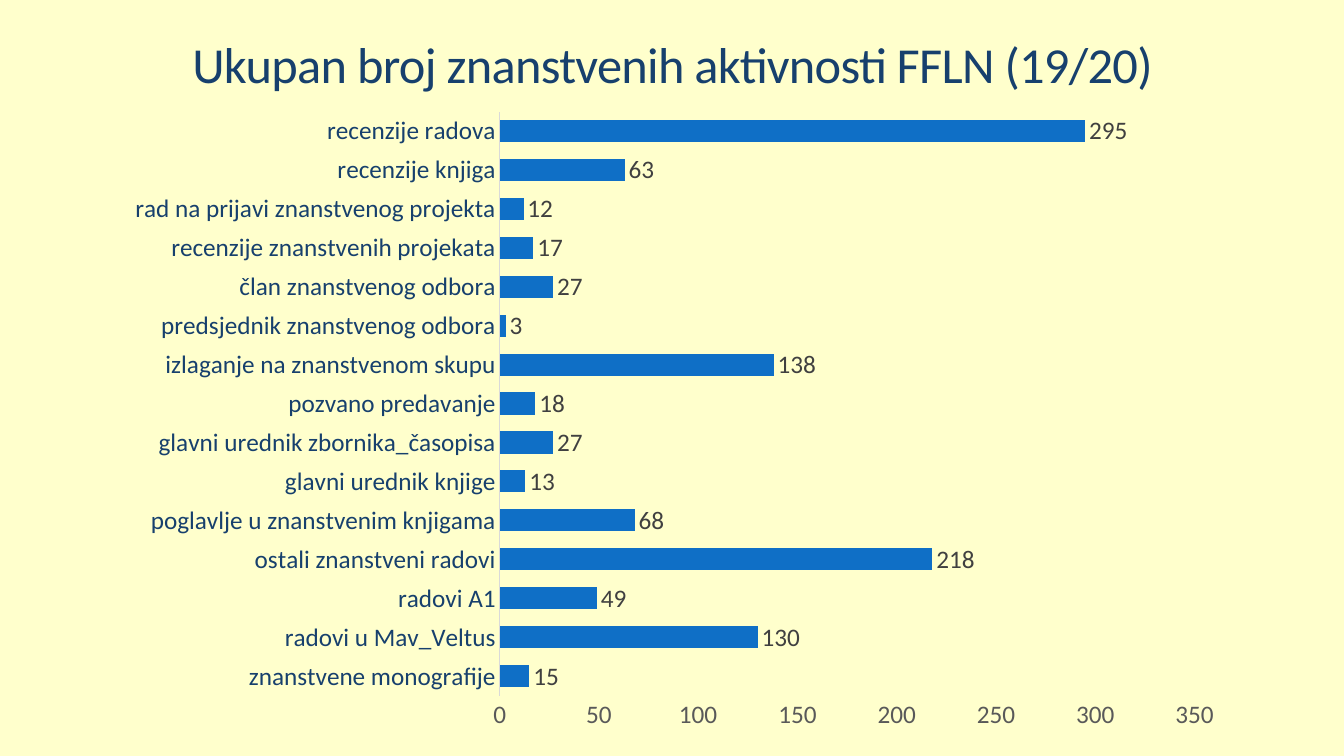
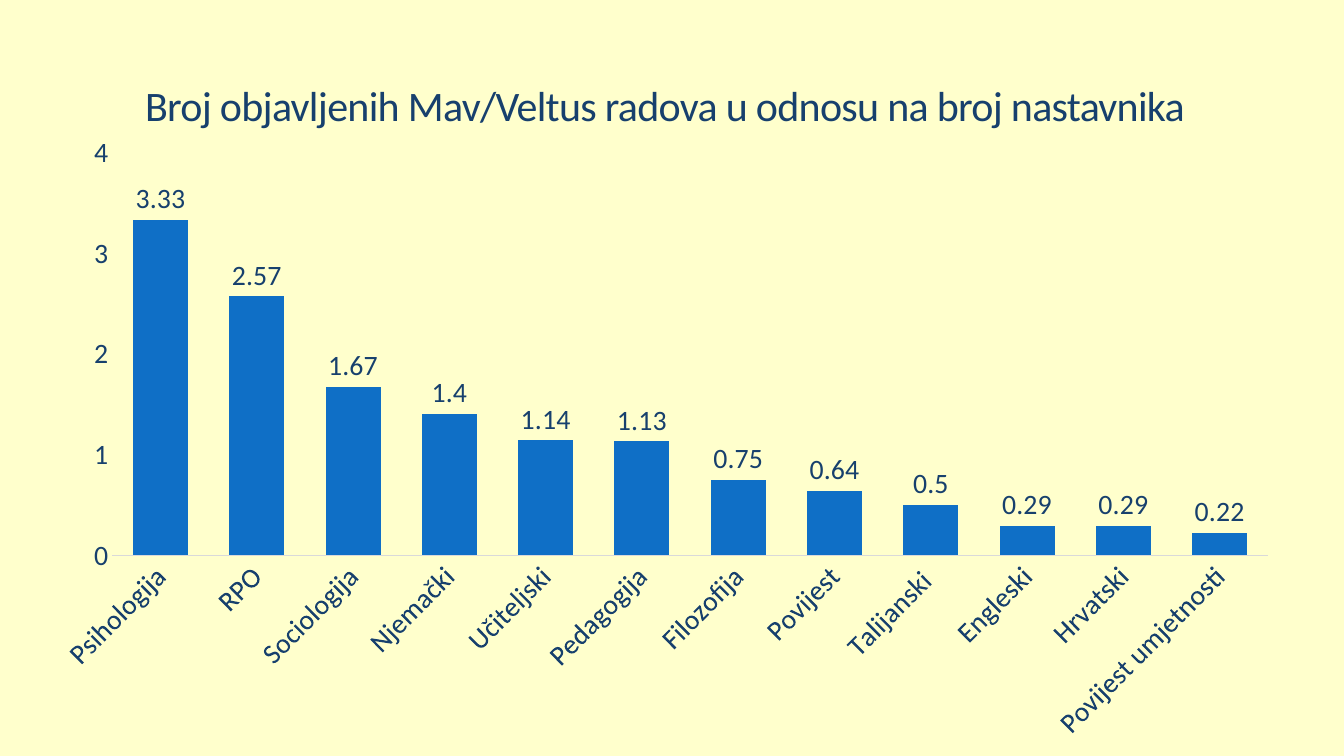
import pptx
import pptx.util
import pptx.chart.data
import pptx.dml.color
import pptx.enum.chart
import pptx.enum.text
import pptx.oxml
import pptx.oxml.ns

PX = 9144  # 100 px to the inch
FONT = "Calibri"
CREAM = pptx.dml.color.RGBColor(0xFF, 0xFF, 0xCC)
NAVY = pptx.dml.color.RGBColor(0x17, 0x40, 0x6D)
BLUE = pptx.dml.color.RGBColor(0x0F, 0x6F, 0xC6)
PALE = pptx.dml.color.RGBColor(0xD9, 0xD9, 0xD9)
GREY = pptx.dml.color.RGBColor(0x59, 0x59, 0x59)
DARK = pptx.dml.color.RGBColor(0x40, 0x40, 0x40)

KIND = pptx.enum.chart.XL_CHART_TYPE
ALIGN = pptx.enum.text.PP_ALIGN

PAGES = [
    dict(
        title="Ukupan broj znanstvenih aktivnosti FFLN (19/20)",
        head=(92, 40, 1150, 58), size=36, align=ALIGN.CENTER,
        kind=KIND.BAR_CLUSTERED, area=(112, 98, 1114, 639),
        text=18, scale=GREY, label=DARK, top=350, step=50,
        turn=None, plot=None,
        data={
            "znanstvene monografije": 15,
            "radovi u Mav_Veltus": 130,
            "radovi A1": 49,
            "ostali znanstveni radovi": 218,
            "poglavlje u znanstvenim knjigama": 68,
            "glavni urednik knjige": 13,
            "glavni urednik zbornika_časopisa": 27,
            "pozvano predavanje": 18,
            "izlaganje na znanstvenom skupu": 138,
            "predsjednik znanstvenog odbora": 3,
            "član znanstvenog odbora": 27,
            "recenzije znanstvenih projekata": 17,
            "rad na prijavi znanstvenog projekta": 12,
            "recenzije knjiga": 63,
            "recenzije radova": 295,
        },
    ),
    dict(
        title="Broj objavljenih Mav/Veltus radova u odnosu na broj nastavnika",
        head=(134, 69, 1150, 65), size=30, align=ALIGN.LEFT,
        kind=KIND.COLUMN_CLUSTERED, area=(61, 134, 1211, 616),
        text=20, scale=NAVY, label=NAVY, top=4, step=1,
        turn=-45, plot=dict(x=0.034, y=0.026, w=0.954, h=0.65),
        data={
            "Psihologija": 3.33,
            "RPO": 2.57,
            "Sociologija": 1.67,
            "Njemački": 1.4,
            "Učiteljski": 1.14,
            "Pedagogija": 1.13,
            "Filozofija": 0.75,
            "Povijest": 0.64,
            "Talijanski ": 0.5,
            "Engleski": 0.29,
            "Hrvatski": 0.29,
            "Povijest umjetnosti": 0.22,
        },
    ),
]


def style(font, size, color):
    font.name = FONT
    font.size = pptx.util.Pt(size)
    font.color.rgb = color


def place(plot, box):
    """Fix the inner plot area as fractions of the chart."""
    for old in plot.findall(pptx.oxml.ns.qn("c:layout")):
        plot.remove(old)
    tags = "".join(f'<c:{key} val="{val}"/>' for key, val in box.items())
    plot.insert(0, pptx.oxml.parse_xml(
        f'<c:layout {pptx.oxml.ns.nsdecls("c")}><c:manualLayout>'
        '<c:layoutTarget val="inner"/><c:xMode val="edge"/>'
        f'<c:yMode val="edge"/>{tags}</c:manualLayout></c:layout>'))


deck = pptx.Presentation()
deck.slide_width = 1333 * PX
deck.slide_height = 750 * PX

for page in PAGES:
    slide = deck.slides.add_slide(deck.slide_layouts[6])
    slide.background.fill.solid()
    slide.background.fill.fore_color.rgb = CREAM

    # Chart
    data = pptx.chart.data.CategoryChartData()
    data.categories = list(page["data"])
    data.add_series("Series 1", list(page["data"].values()))
    area = [n * PX for n in page["area"]]
    chart = slide.shapes.add_chart(page["kind"], *area, data).chart
    chart.has_title = False
    chart.has_legend = False
    style(chart.font, page["text"], NAVY)

    # Bars and their labels
    plot = chart.plots[0]
    plot.gap_width = 75
    plot.vary_by_categories = False
    fill = plot.series[0].format.fill
    fill.solid()
    fill.fore_color.rgb = BLUE
    plot.has_data_labels = True
    labels = plot.data_labels
    labels.show_value = True
    labels.position = pptx.enum.chart.XL_LABEL_POSITION.OUTSIDE_END
    style(labels.font, page["text"], page["label"])

    # Axes
    cat, val = chart.category_axis, chart.value_axis
    for axis, color in ((cat, NAVY), (val, page["scale"])):
        axis.major_tick_mark = pptx.enum.chart.XL_TICK_MARK.NONE
        axis.minor_tick_mark = pptx.enum.chart.XL_TICK_MARK.NONE
        axis.has_major_gridlines = False
        style(axis.tick_labels.font, page["text"], color)
    cat.format.line.color.rgb = PALE
    cat.format.line.width = pptx.util.Pt(0.75)
    val.format.line.fill.background()
    val.minimum_scale = 0
    val.maximum_scale = page["top"]
    val.major_unit = page["step"]
    if page["turn"]:
        cat._element.txPr.bodyPr.set("rot", str(page["turn"] * 60000))
    if page["plot"]:
        place(chart._chartSpace.chart.plotArea, page["plot"])

    # Title
    box = slide.shapes.add_textbox(*[n * PX for n in page["head"]])
    frame = box.text_frame
    frame.word_wrap = True
    frame.vertical_anchor = pptx.enum.text.MSO_ANCHOR.BOTTOM
    frame.text = page["title"]
    para = frame.paragraphs[0]
    para.alignment = page["align"]
    para.line_spacing = 0.85
    run = para.runs[0]
    style(run.font, page["size"], NAVY)
    run._r.get_or_add_rPr().set("spc", "-50")

deck.save("out.pptx")
